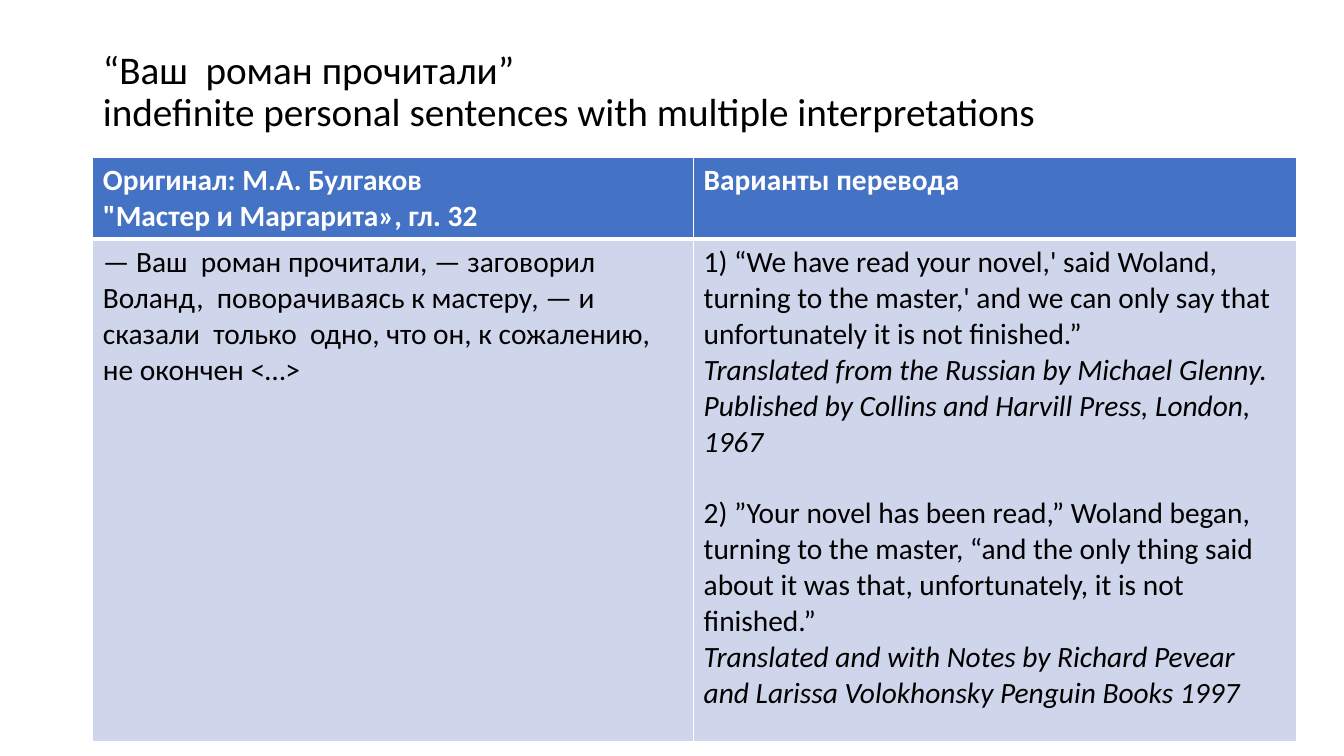
"""Build a slide that sets a Russian sentence beside its English versions."""
from dataclasses import dataclass

from lxml import etree
from pptx import Presentation
from pptx import util as u
from pptx.dml.color import RGBColor
from pptx.enum import text
from pptx.oxml.ns import qn

FONT = "Calibri"
BLACK, WHITE, BLUE, PALE = "000000", "FFFFFF", "4472C4", "CFD5EA"
SIZE = 21
GAP = 25.6


@dataclass
class Line:
    """One paragraph of a cell."""
    words: str
    slant: bool = False
    before: float = 0


@dataclass
class Row:
    """One table row with its look."""
    height: float
    fill: str
    ink: str
    bold: bool
    top: float
    bottom: float
    cells: list[list[Line]]


ROWS = [
    Row(2.06, BLUE, WHITE, True, 1, 3, [
        [Line("Оригинал: М.А. Булгаков"), Line('"Мастер и Маргарита», гл. 32')],
        [Line("Варианты перевода")],
    ]),
    Row(12.65, PALE, BLACK, False, 3, 1, [
        [Line("— Ваш  роман прочитали, — заговорил Воланд,  поворачиваясь к мастеру, — "
              "и  сказали  только  одно, что он, к сожалению,  не окончен <…>")],
        [Line("1) “We have read your novel,' said Woland, turning to the master,' "
              "and we can only say that unfortunately it is not finished.”"),
         Line("Translated from the Russian by Michael Glenny. "
              "Published by Collins and Harvill Press, London, 1967", True),
         Line("2) ”Your novel has been read,” Woland began, turning to the master, "
              "“and the only thing said about it was that, unfortunately, "
              "it is not finished.”", before=GAP),
         Line("Translated and with Notes by Richard Pevear "
              "and Larissa Volokhonsky Penguin Books 1997", True)],
    ]),
]
WIDTHS = [15.14, 15.19]
TITLE = ["“Ваш  роман прочитали” ",
         "indefinite personal sentences with multiple interpretations"]


def tint(code: str) -> RGBColor:
    """Turn a hex string into a colour."""
    return RGBColor.from_string(code)


def write(para, words: str, size: float, ink: str, bold: bool = False,
          slant: bool = False) -> None:
    """Add one formatted run to a paragraph."""
    run = para.add_run()
    run.text = words
    font = run.font
    font.name, font.size = FONT, u.Pt(size)
    font.bold, font.italic = bold, slant
    font.color.rgb = tint(ink)


def edge(cell, side: str, width: float) -> None:
    """Draw one white border of a cell."""
    line = etree.SubElement(cell._tc.get_or_add_tcPr(), qn(f"a:ln{side}"),
                            w=str(u.Pt(width)))
    fill = etree.SubElement(line, qn("a:solidFill"))
    etree.SubElement(fill, qn("a:srgbClr"), val=WHITE)


def fill_cell(cell, row: Row, lines: list[Line]) -> None:
    """Write and format one table cell."""
    for side, width in zip("LRTB", (1, 1, row.top, row.bottom)):
        edge(cell, side, width)
    cell.fill.solid()
    cell.fill.fore_color.rgb = tint(row.fill)
    frame = cell.text_frame
    for num, line in enumerate(lines):
        para = frame.add_paragraph() if num else frame.paragraphs[0]
        if line.before:
            para.space_before = u.Pt(line.before)
        write(para, line.words, SIZE, row.ink, row.bold, line.slant)


def add_title(slide) -> None:
    """Place and fill the title."""
    title = slide.shapes.title
    title.left, title.top = u.Cm(2.34), u.Cm(1.02)
    title.width, title.height = u.Cm(29.21), u.Cm(2.64)
    frame = title.text_frame
    frame.word_wrap = True
    frame.auto_size = text.MSO_AUTO_SIZE.NONE
    frame.vertical_anchor = text.MSO_ANCHOR.MIDDLE
    para = frame.paragraphs[0]
    para.alignment = text.PP_ALIGN.LEFT
    para.line_spacing = 0.9
    para.space_before = u.Pt(0)
    for num, words in enumerate(TITLE):
        if num:
            para.add_line_break()
        write(para, words, 28, BLACK)


def add_grid(slide) -> None:
    """Place and fill the table."""
    high = sum(row.height for row in ROWS)
    grid = slide.shapes.add_table(len(ROWS), len(WIDTHS), u.Cm(2.34), u.Cm(3.96),
                                  u.Cm(sum(WIDTHS)), u.Cm(high)).table
    for col, width in zip(grid.columns, WIDTHS):
        col.width = u.Cm(width)
    for band, row in zip(grid.rows, ROWS):
        band.height = u.Cm(row.height)
        for cell, lines in zip(band.cells, row.cells):
            fill_cell(cell, row, lines)


def main() -> None:
    """Build and save the deck."""
    deck = Presentation()
    deck.slide_width, deck.slide_height = u.Cm(33.87), u.Cm(19.05)
    slide = deck.slides.add_slide(deck.slide_layouts[5])
    add_title(slide)
    add_grid(slide)
    deck.save("out.pptx")


if __name__ == "__main__":
    main()
